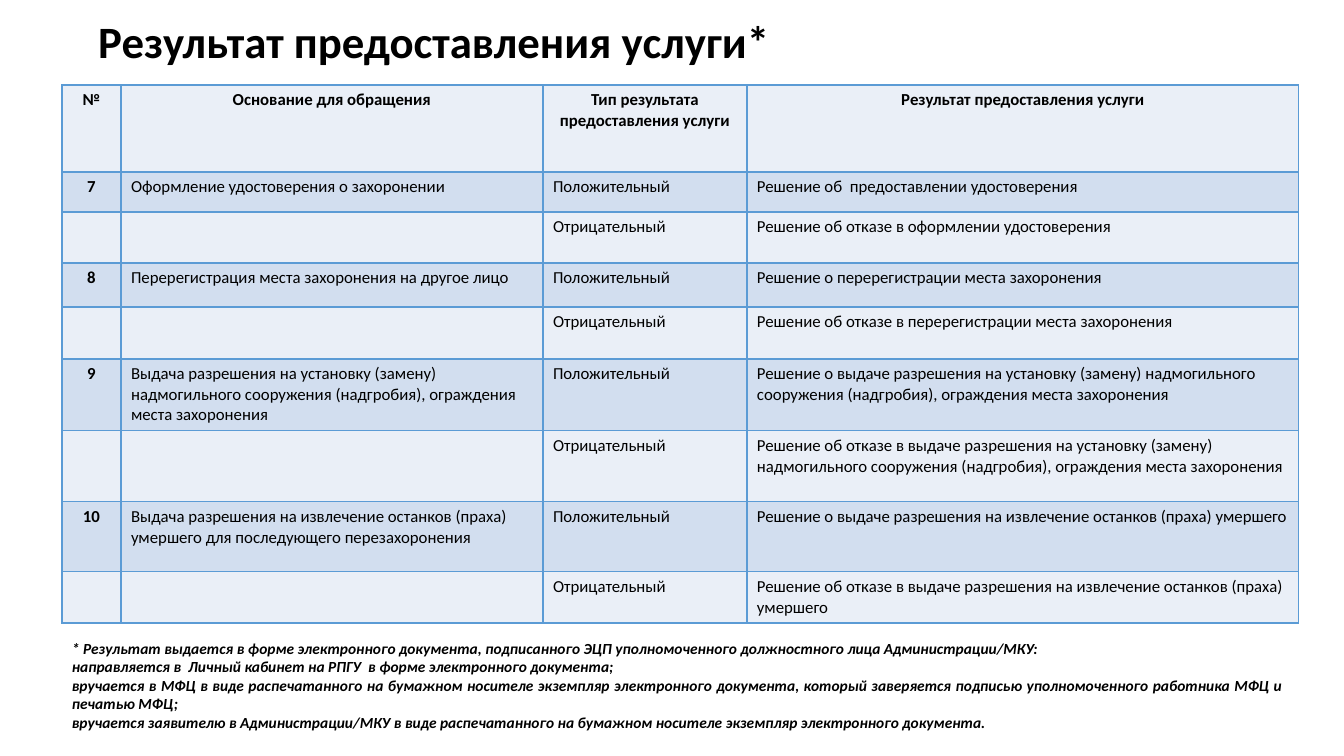
from dataclasses import dataclass

from lxml.etree import SubElement
from pptx import Presentation
from pptx.dml.color import RGBColor
from pptx.enum.text import MSO_ANCHOR as Anchor, MSO_AUTO_SIZE as AutoSize, PP_ALIGN as Align
from pptx.oxml.ns import qn
from pptx.util import Pt

EMU_PER_PX = 12192000 / 1344


@dataclass(frozen=True)
class Theme:
    font: str = "Calibri"
    text: str = "000000"
    border: str = "5B9BD5"
    light: str = "EAEFF7"
    dark: str = "D2DEEF"
    title_size: int = 32
    table_size: int = 12
    note_size: int = 11
    border_width: int = 1


THEME = Theme()

TITLE = "Результат предоставления услуги*"
HEADERS = ["№", "Основание для обращения", "Тип результата предоставления услуги",
           "Результат предоставления услуги"]
# Number, ground for the request, positive result, negative result
SERVICES = [
    ("7", "Оформление удостоверения о захоронении",
     "Решение об  предоставлении удостоверения",
     "Решение об отказе в оформлении удостоверения"),
    ("8", "Перерегистрация места захоронения на другое лицо",
     "Решение о перерегистрации места захоронения",
     "Решение об отказе в перерегистрации места захоронения"),
    ("9", "Выдача разрешения на установку (замену) надмогильного сооружения (надгробия), "
     "ограждения места захоронения",
     "Решение о выдаче разрешения на установку (замену) надмогильного\n"
     "сооружения (надгробия), ограждения места захоронения",
     "Решение об отказе в выдаче разрешения на установку (замену) надмогильного "
     "сооружения (надгробия), ограждения места захоронения"),
    ("10", "Выдача разрешения на извлечение останков (праха) умершего "
     "для последующего перезахоронения",
     "Решение о выдаче разрешения на извлечение останков (праха) умершего",
     "Решение об отказе в выдаче разрешения на извлечение останков (праха) умершего"),
]
NOTES = [
    "* Результат выдается в форме электронного документа, подписанного ЭЦП "
    "уполномоченного должностного лица Администрации/МКУ:",
    "направляется в  Личный кабинет на РПГУ  в форме электронного документа;",
    "вручается в МФЦ в виде распечатанного на бумажном носителе экземпляр электронного "
    "документа, который заверяется подписью уполномоченного работника МФЦ и печатью МФЦ;",
    "вручается заявителю в Администрации/МКУ в виде распечатанного на бумажном носителе "
    "экземпляр электронного документа.",
]
COLUMN_WIDTHS = [59, 422, 204, 552]
ROW_HEIGHTS = [87, 40, 51, 44, 52, 72, 71, 70, 51]


def px(length):
    return round(length * EMU_PER_PX)


def write(paragraph, text, size, bold=False, italic=False, align=Align.LEFT):
    paragraph.text = text
    paragraph.alignment = align
    font = paragraph.font
    font.name, font.size = THEME.font, Pt(size)
    font.bold, font.italic = bold, italic
    font.color.rgb = RGBColor.from_string(THEME.text)


def add_borders(cell):
    properties = cell._tc.get_or_add_tcPr()
    for index, side in enumerate(("lnL", "lnR", "lnT", "lnB")):
        line = SubElement(properties, qn(f"a:{side}"), w=str(Pt(THEME.border_width)))
        fill = SubElement(line, qn("a:solidFill"))
        SubElement(fill, qn("a:srgbClr"), val=THEME.border)
        properties.insert(index, line)  # borders come before the cell fill


def add_title(slide):
    title = slide.shapes.title
    title.left, title.top, title.width, title.height = px(88), px(-15), px(1168), px(118)
    frame = title.text_frame
    frame.auto_size = AutoSize.NONE
    frame.vertical_anchor = Anchor.MIDDLE
    write(frame.paragraphs[0], TITLE, THEME.title_size, bold=True)
    frame.paragraphs[0].line_spacing = 0.9


def add_results_table(slide):
    rows = [HEADERS]
    for number, ground, positive, negative in SERVICES:
        rows.append([number, ground, "Положительный", positive])
        rows.append(["", "", "Отрицательный", negative])

    table = slide.shapes.add_table(len(rows), len(HEADERS), px(62), px(85),
                                   px(sum(COLUMN_WIDTHS)), px(sum(ROW_HEIGHTS))).table
    for column, width in zip(table.columns, COLUMN_WIDTHS):
        column.width = px(width)
    for row, height in zip(table.rows, ROW_HEIGHTS):
        row.height = px(height)

    for row_index, texts in enumerate(rows):
        for column_index, text in enumerate(texts):
            cell = table.cell(row_index, column_index)
            cell.fill.solid()
            cell.fill.fore_color.rgb = RGBColor.from_string(
                THEME.dark if row_index % 2 else THEME.light)
            heading = row_index == 0 or column_index == 0
            write(cell.text_frame.paragraphs[0], text, THEME.table_size, bold=heading,
                  align=Align.CENTER if heading else Align.LEFT)
            add_borders(cell)


def add_notes(slide):
    frame = slide.shapes.add_textbox(px(62), px(634), px(1232), px(104)).text_frame
    frame.word_wrap = True
    frame.auto_size = AutoSize.SHAPE_TO_FIT_TEXT
    for index, note in enumerate(NOTES):
        paragraph = frame.add_paragraph() if index else frame.paragraphs[0]
        write(paragraph, note, THEME.note_size, bold=True, italic=True, align=Align.JUSTIFY)


def main():
    presentation = Presentation()
    presentation.slide_width, presentation.slide_height = px(1344), px(756)
    slide = presentation.slides.add_slide(presentation.slide_layouts[5])  # title only
    add_title(slide)
    add_results_table(slide)
    add_notes(slide)
    presentation.save("out.pptx")


if __name__ == "__main__":
    main()
